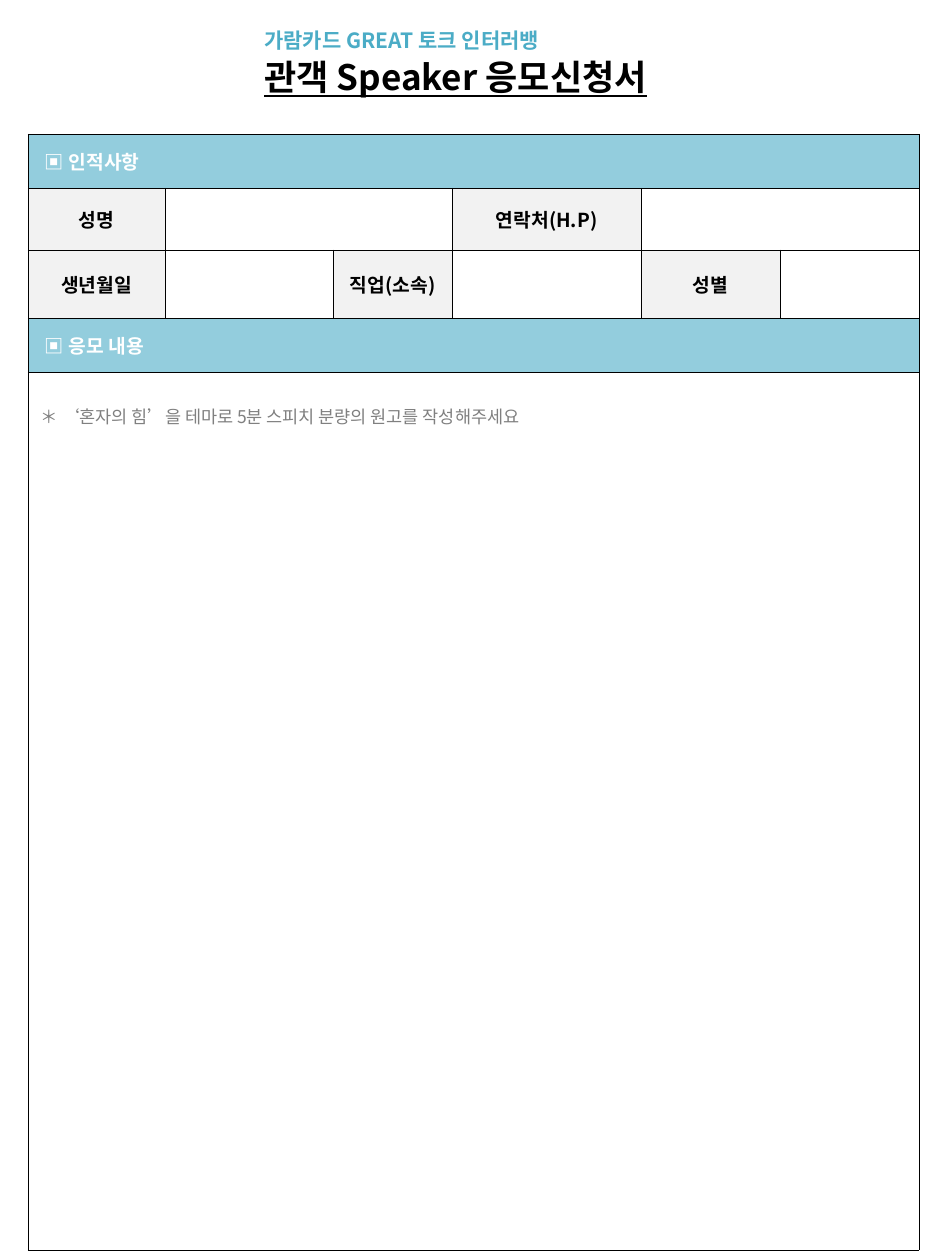
"""Build the one-page audience speaker application form."""
from dataclasses import dataclass

from lxml import etree
from pptx import Presentation
from pptx import util as u
from pptx.dml.color import RGBColor
from pptx.enum import text
from pptx.oxml import ns

SCALE = u.Inches(1) / 126


@dataclass(frozen=True)
class Theme:
    font: str = "Noto Sans CJK KR"
    accent: str = "4BACC6"
    band: str = "93CDDD"
    label: str = "F2F2F2"
    white: str = "FFFFFF"
    black: str = "000000"
    gray: str = "808080"
    title_pt: int = 20
    program_pt: int = 12
    body_pt: int = 11
    note_pt: int = 10
    border_pt: float = 0.25


@dataclass(frozen=True)
class Style:
    size: int
    color: str
    bold: bool = True
    underline: bool = False


@dataclass(frozen=True)
class Field:
    row: int
    col: int
    text: str
    style: Style
    span: int = 1
    fill: str | None = None
    center: bool = False
    left: int = 13
    top: int = 6
    anchor: text.MSO_ANCHOR = text.MSO_ANCHOR.MIDDLE


T = Theme()
COLS = (137, 168, 119, 189, 139, 139)
ROWS = (54, 62, 62, 54, 878)


def px(n: int) -> u.Emu:
    """Turn pixels into EMU."""
    return u.Emu(round(n * SCALE))


def add_run(p, words: str, style: Style) -> None:
    """Append one styled run to a paragraph."""
    r = p.add_run()
    r.text = words
    f = r.font
    f.size, f.bold, f.name = u.Pt(style.size), style.bold, T.font
    if style.underline:
        f.underline = True
    f.color.rgb = RGBColor.from_string(style.color)
    etree.SubElement(r._r.get_or_add_rPr(), ns.qn("a:ea"), typeface=T.font)


def add_borders(cell) -> None:
    """Draw a thin line on all four sides of a cell."""
    tc_pr = cell._tc.get_or_add_tcPr()
    for side in "LRTB":
        ln = etree.SubElement(tc_pr, ns.qn(f"a:ln{side}"), w=str(u.Pt(T.border_pt)))
        fill = etree.SubElement(ln, ns.qn("a:solidFill"))
        etree.SubElement(fill, ns.qn("a:srgbClr"), val=T.black)


def section(row: int, words: str) -> Field:
    """Describe a full-width section heading."""
    return Field(row, 0, words, Style(T.body_pt, T.white), len(COLS), T.band, left=17)


def label(row: int, col: int, words: str) -> Field:
    """Describe a shaded field label."""
    return Field(row, col, words, Style(T.body_pt, T.black), fill=T.label, center=True)


def blank(row: int, col: int, span: int) -> Field:
    """Describe a merged cell left for the applicant."""
    return Field(row, col, "", Style(T.body_pt, T.black), span)


def fill_field(table, field: Field) -> None:
    """Merge, colour and caption one field of the form."""
    cell = table.cell(field.row, field.col)
    if field.span > 1:
        cell.merge(table.cell(field.row, field.col + field.span - 1))
    if field.fill:
        cell.fill.solid()
        cell.fill.fore_color.rgb = RGBColor.from_string(field.fill)
    cell.vertical_anchor = field.anchor
    cell.margin_left, cell.margin_top = px(field.left), px(field.top)
    if field.text:
        p = cell.text_frame.paragraphs[0]
        if field.center:
            p.alignment = text.PP_ALIGN.CENTER
        add_run(p, field.text, field.style)


def add_form(s, fields: list[Field]) -> None:
    """Add the bordered form table."""
    frame = s.shapes.add_table(len(ROWS), len(COLS), px(28), px(134), px(sum(COLS)), px(sum(ROWS)))
    table = frame.table
    table.first_row = table.horz_banding = False
    for col, width in zip(table.columns, COLS):
        col.width = px(width)
    for row, height in zip(table.rows, ROWS):
        row.height = px(height)
    for cell in table.iter_cells():
        add_borders(cell)
        cell.fill.background()
    for field in fields:
        fill_field(table, field)


def add_heading(s) -> None:
    """Add the program name and the form title."""
    tf = s.shapes.add_textbox(px(252), px(21), px(456), px(84)).text_frame
    tf.word_wrap = True
    tf.auto_size = text.MSO_AUTO_SIZE.SHAPE_TO_FIT_TEXT
    p = tf.paragraphs[0]
    p.space_after = u.Pt(2)
    add_run(p, "가람카드 GREAT 토크 인터러뱅", Style(T.program_pt, T.accent))
    add_run(tf.add_paragraph(), "관객 Speaker 응모신청서", Style(T.title_pt, T.black, underline=True))


def main() -> None:
    """Assemble and save the form."""
    prs = Presentation()
    prs.slide_width, prs.slide_height = px(945), px(1260)
    s = prs.slides.add_slide(prs.slide_layouts[6])
    add_form(s, [
        section(0, "▣ 인적사항"),
        label(1, 0, "성명"),
        blank(1, 1, 2),
        label(1, 3, "연락처(H.P)"),
        blank(1, 4, 2),
        label(2, 0, "생년월일"),
        label(2, 2, "직업(소속)"),
        label(2, 4, "성별"),
        section(3, "▣ 응모 내용"),
        Field(4, 0, "＊ ‘혼자의 힘’을 테마로 5분 스피치 분량의 원고를 작성해주세요",
              Style(T.note_pt, T.gray, bold=False), len(COLS), top=31,
              anchor=text.MSO_ANCHOR.TOP),
    ])
    add_heading(s)
    prs.save("out.pptx")


if __name__ == "__main__":
    main()
